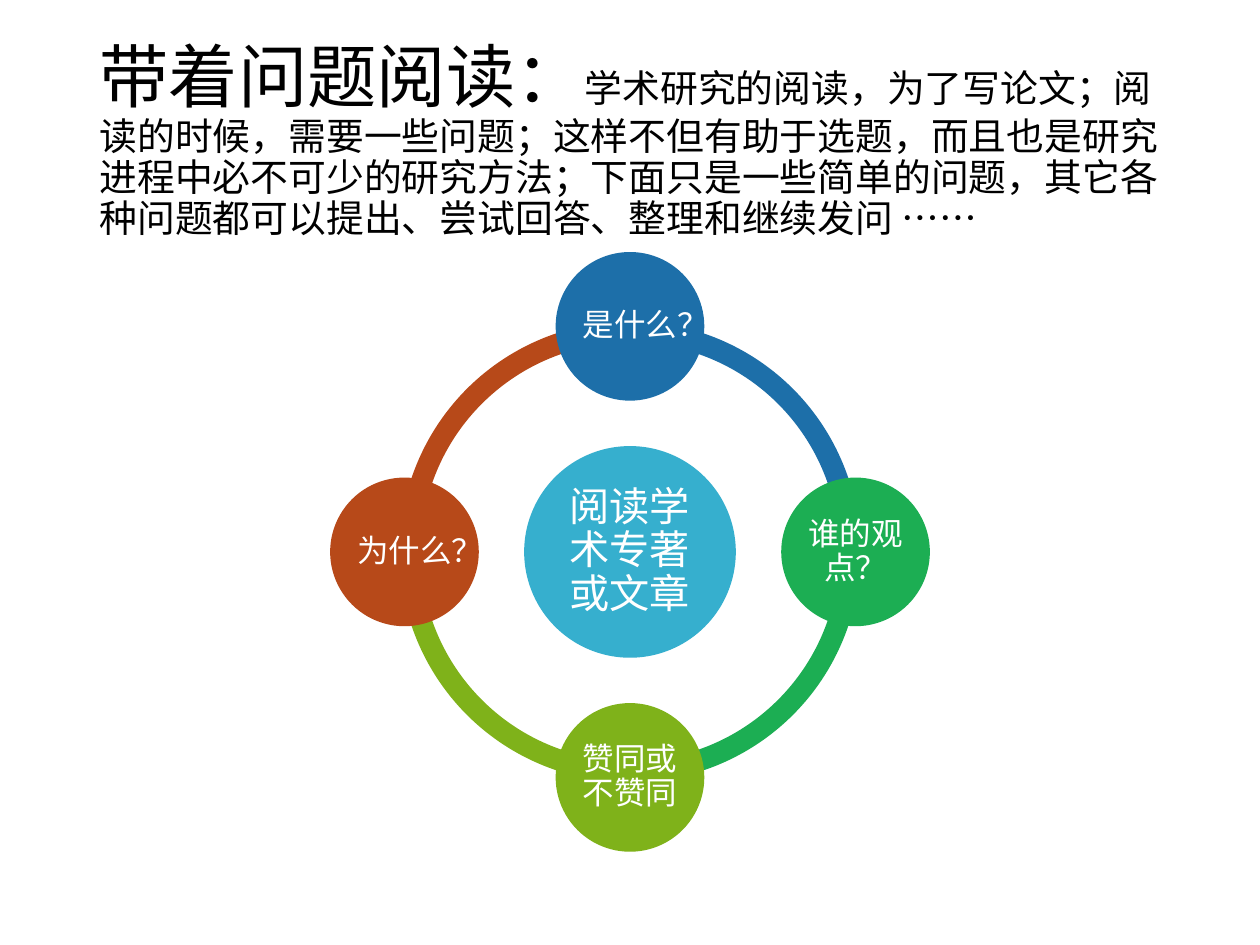
from dataclasses import dataclass
from math import cos, radians, sin

from pptx import Presentation
from pptx.dml.color import RGBColor
from pptx.enum.shapes import MSO_SHAPE
from pptx.enum.text import MSO_ANCHOR, MSO_AUTO_SIZE, PP_ALIGN
from pptx.util import Inches, Pt


@dataclass(frozen=True)
class Theme:
    font: str = "Times New Roman"
    black: str = "000000"
    white: str = "FFFFFF"
    hub: str = "36AFCE"
    blue: str = "1D6FA9"
    green: str = "1CAE53"
    lime: str = "7FB21A"
    rust: str = "B74919"
    title_size: float = 39.6
    intro_size: float = 21.6
    hub_size: float = 23
    question_size: float = 18


THEME = Theme()
CENTER_X, CENTER_Y = 5, 4.38
ORBIT = 1.79
RING_DIAMETER = 3.66
RING_THICKNESS = 0.046
HUB_DIAMETER = 1.68
QUESTION_DIAMETER = 1.18
ADJUSTMENT_PER_DEGREE = 0.6

TITLE = "带着问题阅读："
INTRO = (
    "学术研究的阅读，为了写论文；阅读的时候，需要一些问题；"
    "这样不但有助于选题，而且也是研究进程中必不可少的研究方法；"
    "下面只是一些简单的问题，其它各种问题都可以提出、尝试回答、整理和继续发问 ……"
)
HUB = "阅读学术专著或文章"
# Clockwise from the top
QUESTIONS = [
    ("是什么？", THEME.blue),
    ("谁的观点？", THEME.green),
    ("赞同或不赞同", THEME.lime),
    ("为什么？", THEME.rust),
]


def format_run(run, size, color):
    run.font.name = THEME.font
    run.font.size = Pt(size)
    run.font.color.rgb = RGBColor.from_string(color)


def set_title(slide):
    title = slide.shapes.title
    title.left, title.top = Inches(0.69), Inches(0.4)
    title.width, title.height = Inches(8.62), Inches(1.45)
    frame = title.text_frame
    frame.auto_size = MSO_AUTO_SIZE.NONE
    frame.vertical_anchor = MSO_ANCHOR.MIDDLE
    paragraph = frame.paragraphs[0]
    paragraph.alignment = PP_ALIGN.LEFT
    paragraph.line_spacing = 0.9
    for text, size in ((TITLE, THEME.title_size), (INTRO, THEME.intro_size)):
        run = paragraph.add_run()
        run.text = text
        format_run(run, size, THEME.black)


def add_round(shapes, preset, x, y, diameter, color):
    """Add a plain filled shape centred on x, y."""
    shape = shapes.add_shape(
        preset,
        Inches(x - diameter / 2),
        Inches(y - diameter / 2),
        Inches(diameter),
        Inches(diameter),
    )
    shape.shadow.inherit = False
    shape.fill.solid()
    shape.fill.fore_color.rgb = RGBColor.from_string(color)
    shape.line.fill.background()
    return shape


def add_arc(shapes, start, color):
    """Add a quarter of the ring, clockwise from start in degrees."""
    arc = add_round(
        shapes, MSO_SHAPE.BLOCK_ARC, CENTER_X, CENTER_Y, RING_DIAMETER, color
    )
    arc.adjustments[0] = start * ADJUSTMENT_PER_DEGREE
    arc.adjustments[1] = (start + 90) % 360 * ADJUSTMENT_PER_DEGREE
    arc.adjustments[2] = RING_THICKNESS


def add_circle(shapes, x, y, diameter, color, text, size):
    circle = add_round(shapes, MSO_SHAPE.OVAL, x, y, diameter, color)
    frame = circle.text_frame
    frame.text = text
    frame.word_wrap = True
    frame.vertical_anchor = MSO_ANCHOR.MIDDLE
    frame.margin_left = frame.margin_right = Inches(0.03)
    frame.margin_top = frame.margin_bottom = Inches(0.03)
    paragraph = frame.paragraphs[0]
    paragraph.alignment = PP_ALIGN.CENTER
    paragraph.line_spacing = 0.9
    format_run(paragraph.runs[0], size, THEME.white)


def add_cycle(slide):
    shapes = slide.shapes.add_group_shape().shapes
    stops = [
        ((270 + 90 * index) % 360, text, color)
        for index, (text, color) in enumerate(QUESTIONS)
    ]
    for angle, _, color in reversed(stops):
        add_arc(shapes, angle, color)
    add_circle(
        shapes, CENTER_X, CENTER_Y, HUB_DIAMETER, THEME.hub, HUB, THEME.hub_size
    )
    for angle, text, color in stops:
        x = CENTER_X + ORBIT * cos(radians(angle))
        y = CENTER_Y + ORBIT * sin(radians(angle))
        add_circle(
            shapes, x, y, QUESTION_DIAMETER, color, text, THEME.question_size
        )


def main():
    presentation = Presentation()
    presentation.slide_width = Inches(10)
    presentation.slide_height = Inches(7.5)
    title_only = presentation.slide_layouts[5]
    slide = presentation.slides.add_slide(title_only)
    set_title(slide)
    add_cycle(slide)
    presentation.save("out.pptx")


if __name__ == "__main__":
    main()
